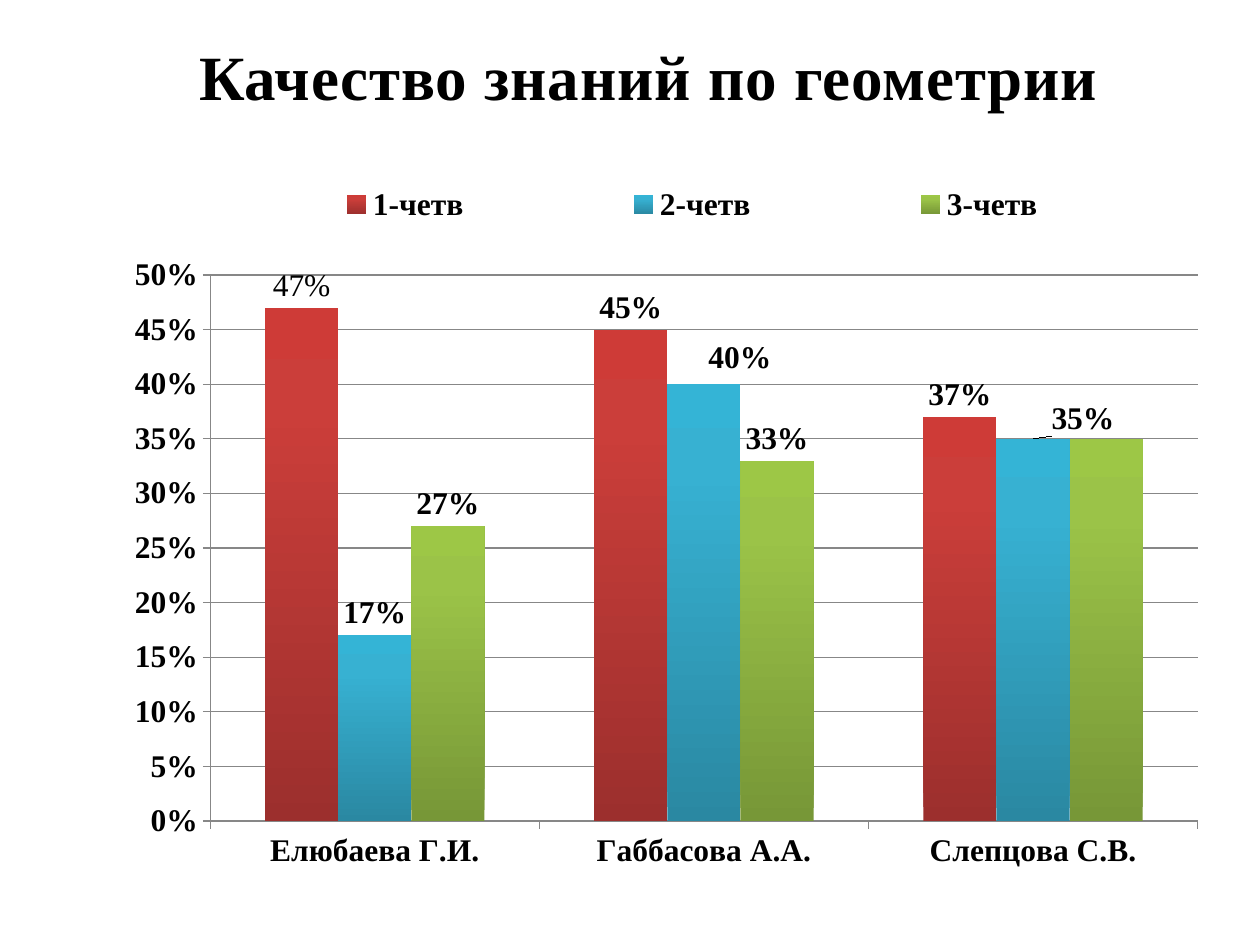
from pptx import Presentation
from pptx.chart.data import CategoryChartData as Data
from pptx.dml.color import RGBColor as Rgb
from pptx.enum.chart import XL_CHART_TYPE as Kind
from pptx.enum.chart import XL_LABEL_POSITION as Spot
from pptx.enum.chart import XL_LEGEND_POSITION as Side
from pptx.enum.chart import XL_TICK_MARK as Tick
from pptx.enum.text import MSO_ANCHOR as Anchor
from pptx.enum.text import PP_ALIGN as Align
from pptx.oxml import parse_xml as to_xml
from pptx.oxml.ns import nsdecls, qn
from pptx.util import Inches, Pt

theme = {
    "face": "Times New Roman",
    "ink": Rgb.from_string("000000"),
    "grid": Rgb.from_string("878787"),
    "head": Pt(36),
    "text": Pt(18),
    "bars": [
        ("9C2F2D", "CB3E3A", "CE3B37"),
        ("2A88A2", "37B1D2", "34B4D6"),
        ("779737", "9BC348", "9DC746"),
    ],
}
terms = {
    "1-четв": (0.47, 0.45, 0.37),
    "2-четв": (0.17, 0.40, 0.35),
    "3-четв": (0.27, 0.33, 0.35),
}


def style(font, size, bold=True):
    font.name = theme["face"]
    font.size = size
    font.bold = bold
    font.color.rgb = theme["ink"]


def layout(x, y, w=None, h=None, inner=False):
    tags = '<c:layoutTarget val="inner"/>' if inner else ""
    if w:
        tags += '<c:xMode val="edge"/><c:yMode val="edge"/>'
    for key, val in zip("xywh", (x, y, w, h)):
        if val is not None:
            tags += f'<c:{key} val="{val}"/>'
    return to_xml(
        f'<c:layout {nsdecls("c")}><c:manualLayout>{tags}</c:manualLayout></c:layout>'
    )


deck = Presentation()
deck.slide_width, deck.slide_height = Inches(10), Inches(7.5)
wide, high = deck.slide_width, deck.slide_height
slide = deck.slides.add_slide(deck.slide_layouts[5])

title = slide.shapes.title
title.left, title.top = int(wide * 0.03), int(high * 0.03)
title.width, title.height = int(wide * 0.97), int(high * 0.1)
frame = title.text_frame
frame.word_wrap = True
frame.vertical_anchor = Anchor.MIDDLE
para = frame.paragraphs[0]
para.alignment = Align.CENTER
run = para.add_run()
run.text = "Качество знаний по геометрии"
style(run.font, theme["head"])
run.font._element.set("spc", "50")

data = Data(number_format="0%")
data.categories = ["Елюбаева Г.И.", "Габбасова А.А.", "Слепцова С.В."]
for name, vals in terms.items():
    data.add_series(name, vals)
chart = slide.shapes.add_chart(
    Kind.COLUMN_CLUSTERED,
    Inches(0.47), Inches(1.25), Inches(9.22), Inches(6.02), data,
).chart
chart.has_title = False
style(chart.font, theme["text"])

area = chart._chartSpace.chart.plotArea
for old in area.findall(qn("c:layout")):
    area.remove(old)
area.insert(0, layout(0.13, 0.155, 0.85, 0.72, inner=True))

chart.has_legend = True
legend = chart.legend
legend.position = Side.RIGHT
legend.include_in_layout = False
style(legend.font, theme["text"])
box = legend._element
for old in box.findall(qn("c:layout")):
    box.remove(old)
box.find(qn("c:legendPos")).addnext(layout(0.11, 0.02, 0.87, 0.085))

for axis in (chart.category_axis, chart.value_axis):
    style(axis.tick_labels.font, theme["text"])
    axis.major_tick_mark = Tick.OUTSIDE
    axis.minor_tick_mark = Tick.NONE
    axis.format.line.color.rgb = theme["grid"]
    axis.format.line.width = Pt(0.75)
scale = chart.value_axis
scale.minimum_scale, scale.maximum_scale, scale.major_unit = 0, 0.5, 0.05
scale.tick_labels.number_format = "0%"
scale.tick_labels.number_format_is_linked = False
scale.has_major_gridlines = True
scale.major_gridlines.format.line.color.rgb = theme["grid"]
scale.major_gridlines.format.line.width = Pt(0.75)

plot = chart.plots[0]
plot.gap_width, plot.overlap = 150, 0
plot.vary_by_categories = False
for bar, tones in zip(plot.series, theme["bars"]):
    bar.invert_if_negative = False
    fill = bar.format.fill
    fill.gradient()
    fill.gradient_angle = 90
    stops = bar._element.find(".//" + qn("a:gsLst"))
    for old in list(stops):
        stops.remove(old)
    for pos, tone in zip((0, 80, 100), tones):
        stops.append(to_xml(
            f'<a:gs {nsdecls("a")} pos="{pos * 1000}"><a:srgbClr val="{tone}"/></a:gs>'
        ))
    tags = bar.data_labels
    tags.show_value = True
    tags.number_format = "0%"
    tags.number_format_is_linked = False
    tags.position = Spot.OUTSIDE_END
    style(tags.font, theme["text"])

first, second, third = plot.series
style(first.points[0].data_label.font, theme["text"], bold=False)
for spot, shift in ((1, (0.031, -0.006)), (2, (0.043, 0.003))):
    tag = second.points[spot].data_label
    style(tag.font, theme["text"])
    tag.position = Spot.OUTSIDE_END
    mark = second._element.findall(".//" + qn("c:dLbl"))[-1]
    mark.find(qn("c:idx")).addnext(layout(*shift))
third.data_labels._element.insert(0, to_xml(
    f'<c:dLbl {nsdecls("c")}><c:idx val="2"/><c:delete val="1"/></c:dLbl>'
))

deck.save("out.pptx")
